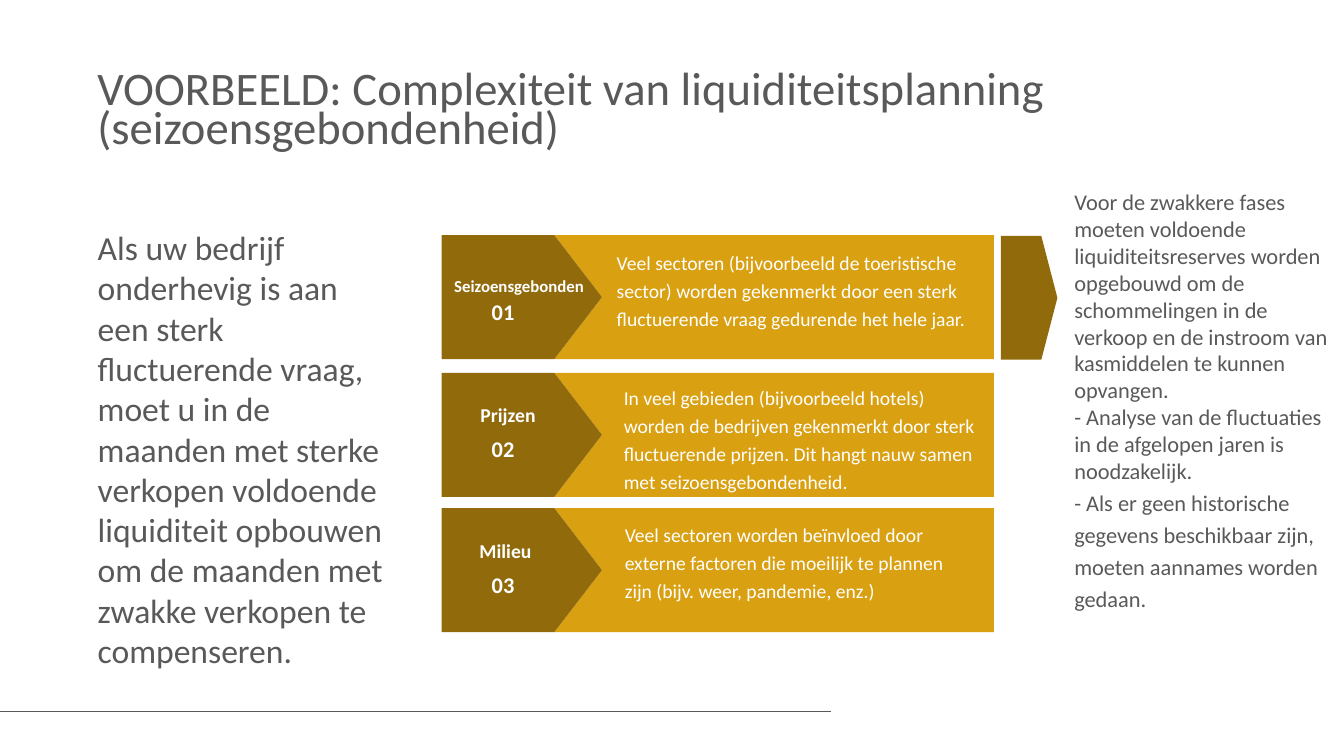
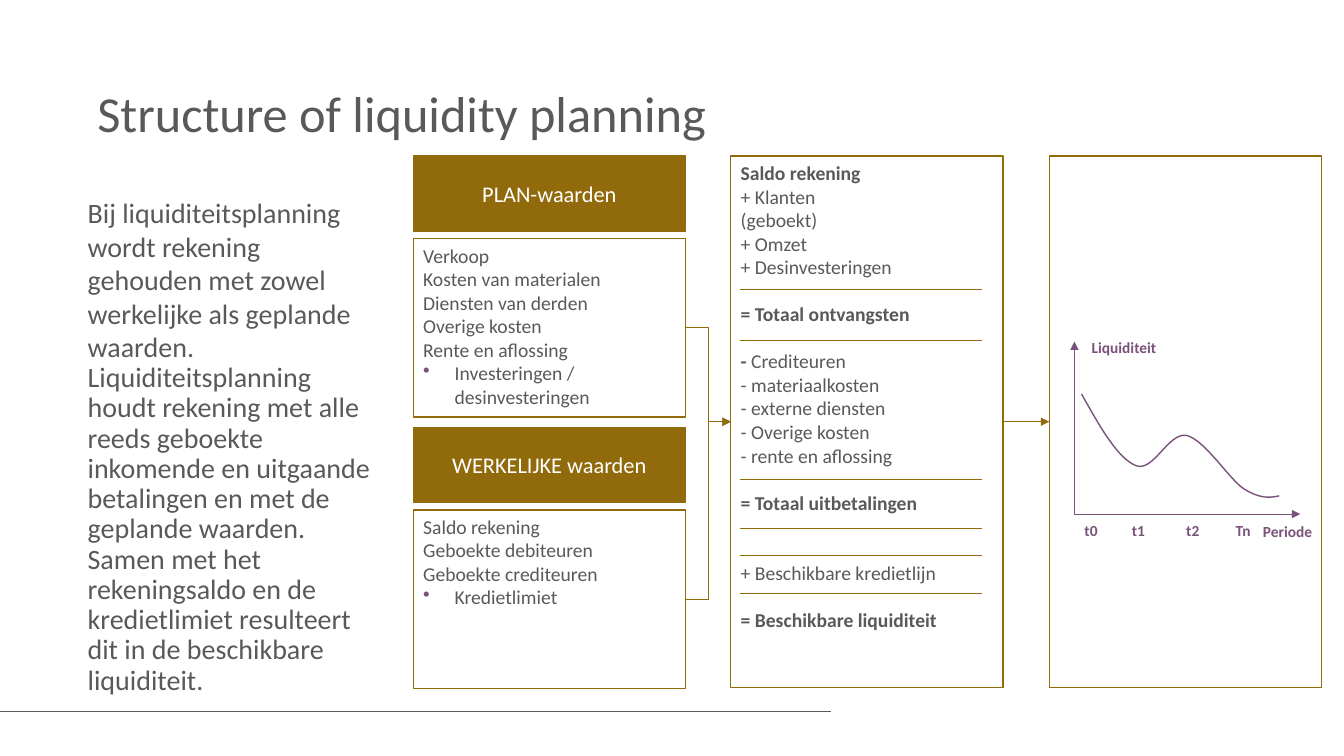
from lxml import etree
from pptx import Presentation
from pptx.dml.color import RGBColor
from pptx.enum.shapes import MSO_CONNECTOR, MSO_SHAPE
from pptx.enum.text import MSO_ANCHOR, MSO_AUTO_SIZE, PP_ALIGN
from pptx.oxml.ns import qn
from pptx.util import Pt

STRAIGHT, ELBOW = MSO_CONNECTOR.STRAIGHT, MSO_CONNECTOR.ELBOW
RECT = MSO_SHAPE.RECTANGLE
TOP, MIDDLE = MSO_ANCHOR.TOP, MSO_ANCHOR.MIDDLE
LEFT, CENTER = PP_ALIGN.LEFT, PP_ALIGN.CENTER
NO_FIT = MSO_AUTO_SIZE.NONE
FONT = "Calibri"
HEX = {"text": "595959", "gold": "D9A012", "brown": "916A0C", "purple": "79527B", "white": "FFFFFF"}
RGB = {name: RGBColor.from_string(value) for name, value in HEX.items()}


def write(tf, paras, size, color="text", bold=False, anchor=TOP, **fmt):
    tf.word_wrap = True
    tf.auto_size = NO_FIT
    tf.vertical_anchor = anchor
    para_fmt = {"alignment": LEFT, "line_spacing": 1.0, "space_before": Pt(0), **fmt}
    for i, runs in enumerate(paras):
        p = tf.add_paragraph() if i else tf.paragraphs[0]
        pPr = p._p.get_or_add_pPr()
        pPr.set("marL", "0")
        pPr.set("indent", "0")
        etree.SubElement(pPr, qn("a:buNone"))
        for name, value in para_fmt.items():
            setattr(p, name, value)
        for text, strong in [(runs, bold)] if isinstance(runs, str) else runs:
            r = p.add_run()
            r.text = text
            for name, value in {"name": FONT, "size": Pt(size), "bold": strong}.items():
                setattr(r.font, name, value)
            r.font.color.rgb = RGB[color]


def add_line(s, kind, x1, y1, x2, y2, color, width=0.75, arrow=False):
    c = s.shapes.add_connector(kind, Pt(x1), Pt(y1), Pt(x2), Pt(y2))
    c.line.color.rgb = RGB[color]
    c.line.width = Pt(width)
    spPr = c.element.spPr
    if arrow:
        etree.SubElement(spPr.find(qn("a:ln")), qn("a:tailEnd"), type="triangle")
    etree.SubElement(spPr, qn("a:effectLst"))
    return c


prs = Presentation()
prs.slide_width, prs.slide_height = Pt(960), Pt(540)
layout = prs.slide_layouts[1]

PAGES = [
    {
        "title": "VOORBEELD: Complexiteit van liquiditeitsplanning (seizoensgebondenheid)",
        "title_top": 49, "title_size": 33.3, "title_spacing": 0.7,
        "body": ["Als uw bedrijf onderhevig is aan een sterk fluctuerende vraag, moet u in de maanden "
                 "met sterke verkopen voldoende liquiditeit opbouwen om de maanden met zwakke "
                 "verkopen te compenseren."],
        "body_at": (62.6, 158.4, 222.5, 327), "body_size": 24,
    },
    {
        "title": "Structure of liquidity planning",
        "title_top": 59.8, "title_size": 36, "title_spacing": 0.9,
        "body": ["Bij liquiditeitsplanning wordt rekening gehouden met zowel werkelijke als geplande waarden.",
                 "Liquiditeitsplanning houdt rekening met alle reeds geboekte inkomende en uitgaande "
                 "betalingen en met de geplande waarden. Samen met het rekeningsaldo en de "
                 "kredietlimiet resulteert dit in de beschikbare liquiditeit."],
        "body_at": (55.4, 136, 222.5, 356.5), "body_size": 20,
    },
]
for page in PAGES:
    s = prs.slides.add_slide(layout)
    title, body = s.placeholders
    places = [(title, (62.3, page["title_top"], 836, 63.4)), (body, page["body_at"])]
    for sp, box in places:
        sp.left, sp.top, sp.width, sp.height = map(Pt, box)
    write(title.text_frame, [page["title"]], page["title_size"], line_spacing=page["title_spacing"])
    write(body.text_frame, page["body"], page["body_size"])

s = prs.slides[0]
footer_rule = add_line(s, STRAIGHT, 0, 508.3, 593.3, 508.3, "text", 1)
layout.shapes.element.append(footer_rule.element)

ROW_H = 88.5
X_LEFT, X_NOTCH, X_TIP, X_RIGHT = 315.5, 396, 430, 710
ROWS = [
    (168, "Seizoensgebonden", 12, (310.3, 193.7, 121), "01", 213.1, (433.4, 172.8, 272.2),
     "Veel sectoren (bijvoorbeeld de toeristische sector) worden gekenmerkt door een sterk "
     "fluctuerende vraag gedurende het hele jaar."),
    (266.4, "Prijzen", 14, (333.4, 284.4, 59), "02", 311, (438.5, 269.3, 270),
     "In veel gebieden (bijvoorbeeld hotels) worden de bedrijven gekenmerkt door sterk "
     "fluctuerende prijzen. Dit hangt nauw samen met seizoensgebondenheid."),
    (363, "Milieu", 14, (313.9, 381.6, 94.3), "03", 407.5, (439.2, 366.5, 243.4),
     "Veel sectoren worden beïnvloed door externe factoren die moeilijk te plannen zijn "
     "(bijv. weer, pandemie, enz.)"),
]
outlines = []
for top, *_ in ROWS:
    mid, low = top + ROW_H / 2, top + ROW_H
    outlines += [
        ("gold", [(X_NOTCH, top), (X_TIP, mid), (X_NOTCH, low), (X_RIGHT, low), (X_RIGHT, top)]),
        ("brown", [(X_LEFT, top), (X_NOTCH, top), (X_TIP, mid), (X_NOTCH, low), (X_LEFT, low)]),
    ]
outlines.append(("brown", [(715, 168.5), (743.8, 168.5), (755.3, 212.8), (743.8, 257), (715, 257)]))
for color, points in outlines:
    points = [(Pt(x), Pt(y)) for x, y in points]
    sp = s.shapes.build_freeform(*points[0]).add_line_segments(points[1:]).convert_to_shape()
    sp.shadow.inherit = False
    sp.fill.solid()
    sp.fill.fore_color.rgb = RGB[color]
    sp.line.fill.background()

for top, label, size, (x, y, w), number, number_y, (tx, ty, tw), text in ROWS:
    tf = s.shapes.add_textbox(Pt(x), Pt(y), Pt(w), Pt(24)).text_frame
    write(tf, [label], size, "white", True, alignment=CENTER)
    tf = s.shapes.add_textbox(Pt(350), Pt(number_y), Pt(18.7), Pt(19.4)).text_frame
    for side in ("left", "top", "right", "bottom"):
        setattr(tf, f"margin_{side}", 0)
    write(tf, [number], 16, "white", True, MIDDLE, alignment=CENTER)
    tf = s.shapes.add_textbox(Pt(tx), Pt(ty), Pt(tw), Pt(ROW_H)).text_frame
    write(tf, [text], 14, "white", line_spacing=1.19)

tf = s.shapes.add_textbox(Pt(760.3), Pt(131), Pt(200), Pt(353.5)).text_frame
write(tf, [
    "Voor de zwakkere fases moeten voldoende liquiditeitsreserves worden opgebouwd om de "
    "schommelingen in de verkoop en de instroom van kasmiddelen te kunnen opvangen.",
    "- Analyse van de fluctuaties in de afgelopen jaren is noodzakelijk.",
    "- Als er geen historische gegevens beschikbaar zijn, moeten aannames worden gedaan.",
], 16)
tf.paragraphs[-1].line_spacing = 1.19

s = prs.slides[1]
s.placeholders[1].text_frame.paragraphs[1].line_spacing = 0.9
COL_W, COL_TOP, COL_H = 194.5, 111.5, 379.5
COL_X = (295.2, 522, 749.5)
HEAD_H, LIST_H, LIST_DROP, GROUP_PITCH = 53.5, 127.5, 59, 193.7
GROUPS = [
    ("PLAN-waarden", ["Verkoop", "Kosten van materialen", "Diensten van derden", "Overige kosten",
                      "Rente en aflossing", "Investeringen / desinvesteringen"]),
    ("WERKELIJKE waarden", ["Saldo rekening", "Geboekte debiteuren", "Geboekte crediteuren",
                            "Kredietlimiet"]),
]
boxes = []
for i in range(len(GROUPS)):
    y = COL_TOP + i * GROUP_PITCH
    boxes += [(COL_X[0], y, HEAD_H, "brown"), (COL_X[0], y + LIST_DROP, LIST_H, "white")]
boxes += [(x, COL_TOP, COL_H, "white") for x in COL_X[1:]]
rects = []
for x, y, h, color in boxes:
    sp = s.shapes.add_shape(RECT, Pt(x), Pt(y), Pt(COL_W), Pt(h))
    sp.shadow.inherit = False
    sp.fill.solid()
    sp.fill.fore_color.rgb = RGB[color]
    sp.line.color.rgb = RGB["brown"]
    sp.line.width = Pt(1)
    rects.append(sp)
plan_head, plan_list, actual_head, actual_list, balance, chart_panel = rects

for (heading, items), head, listing in zip(GROUPS, (plan_head, actual_head), (plan_list, actual_list)):
    write(head.text_frame, [heading], 16, "white", anchor=MIDDLE, alignment=CENTER)
    write(listing.text_frame, items, 14)
    pPr = listing.text_frame.paragraphs[-1]._p.get_or_add_pPr()
    pPr.set("marL", str(Pt(22.5)))
    pPr.set("indent", str(-Pt(22.5)))
    pPr.remove(pPr.find(qn("a:buNone")))
    bu_color = etree.SubElement(pPr, qn("a:buClr"))
    etree.SubElement(bu_color, qn("a:srgbClr"), val=HEX["purple"])
    etree.SubElement(pPr, qn("a:buChar"), char="•")

LINE_GAP = 16.8
BALANCE = [
    ("Saldo rekening", True, 0), ("+ Klanten", False, 0), ("(geboekt)", False, 0),
    ("+ Omzet", False, 0), ("+ Desinvesteringen", False, 0),
    ("= Totaal ontvangsten", True, 1),
    ([("- ", True), ("Crediteuren", False)], False, 1), ("- materiaalkosten", False, 0),
    ("- externe diensten", False, 0), ("- Overige kosten", False, 0),
    ("- rente en aflossing", False, 0),
    ("= Totaal uitbetalingen", True, 1),
    ("+ Beschikbare kredietlijn", False, 2),
    ("= Beschikbare liquiditeit", True, 1),
]
tf = balance.text_frame
write(tf, [[(t, b)] if isinstance(t, str) else t for t, b, _ in BALANCE], 14)
for p, (_, _, gaps) in zip(tf.paragraphs, BALANCE):
    p.space_before = Pt(gaps * LINE_GAP)

for kind, start, end in [(ELBOW, plan_list, balance), (ELBOW, actual_list, balance),
                         (STRAIGHT, balance, chart_panel)]:
    c = add_line(s, kind, 0, 0, 10, 10, "brown", arrow=True)
    c.begin_connect(start, 3)
    c.end_connect(end, 1)
for y in (206.6, 243.4, 342.7, 377.3, 396.7, 424.1):
    add_line(s, STRAIGHT, 528.5, y, 701.3, y, "brown")

AXIS_X, AXIS_Y = 767.5, 367.2
for x, y in [(928.8, AXIS_Y), (AXIS_X, 244)]:
    add_line(s, STRAIGHT, AXIS_X, AXIS_Y, x, y, "purple", arrow=True)
for text, x, y, w in [("Periode", 895, 369.4, 55.4), ("Liquiditeit", 772.6, 238.3, 76),
                      ("t0", 767.5, 368.6, 49), ("t1", 801.4, 368.6, 49),
                      ("t2", 840.2, 368.6, 49), ("Tn", 875.5, 368.6, 49)]:
    tf = s.shapes.add_textbox(Pt(x), Pt(y), Pt(w), Pt(21)).text_frame
    write(tf, [text], 11, "purple", True)

CURVE = [(772.6, 281.5), (785.5, 304.6), (798.5, 327.6), (811.4, 332.6),
         (823.7, 337.7), (834.5, 308.9), (847.4, 311),
         (860.4, 313.9), (877.7, 342), (888.5, 349.2),
         (900, 356.4), (907.2, 355.7), (913.7, 354.2)]
points = [(Pt(x), Pt(y)) for x, y in CURVE]
sp = s.shapes.build_freeform(*points[0]).add_line_segments(points[1:], close=False).convert_to_shape()
sp.shadow.inherit = False
sp.fill.background()
sp.line.color.rgb = RGB["purple"]
sp.line.width = Pt(1)
geometry = sp.element.find(".//" + qn("a:path"))
segments = geometry.findall(qn("a:lnTo"))
for i in range(0, len(segments), 3):
    bezier = etree.SubElement(geometry, qn("a:cubicBezTo"))
    for segment in segments[i:i + 3]:
        bezier.append(segment[0])
        geometry.remove(segment)

prs.save("out.pptx")
